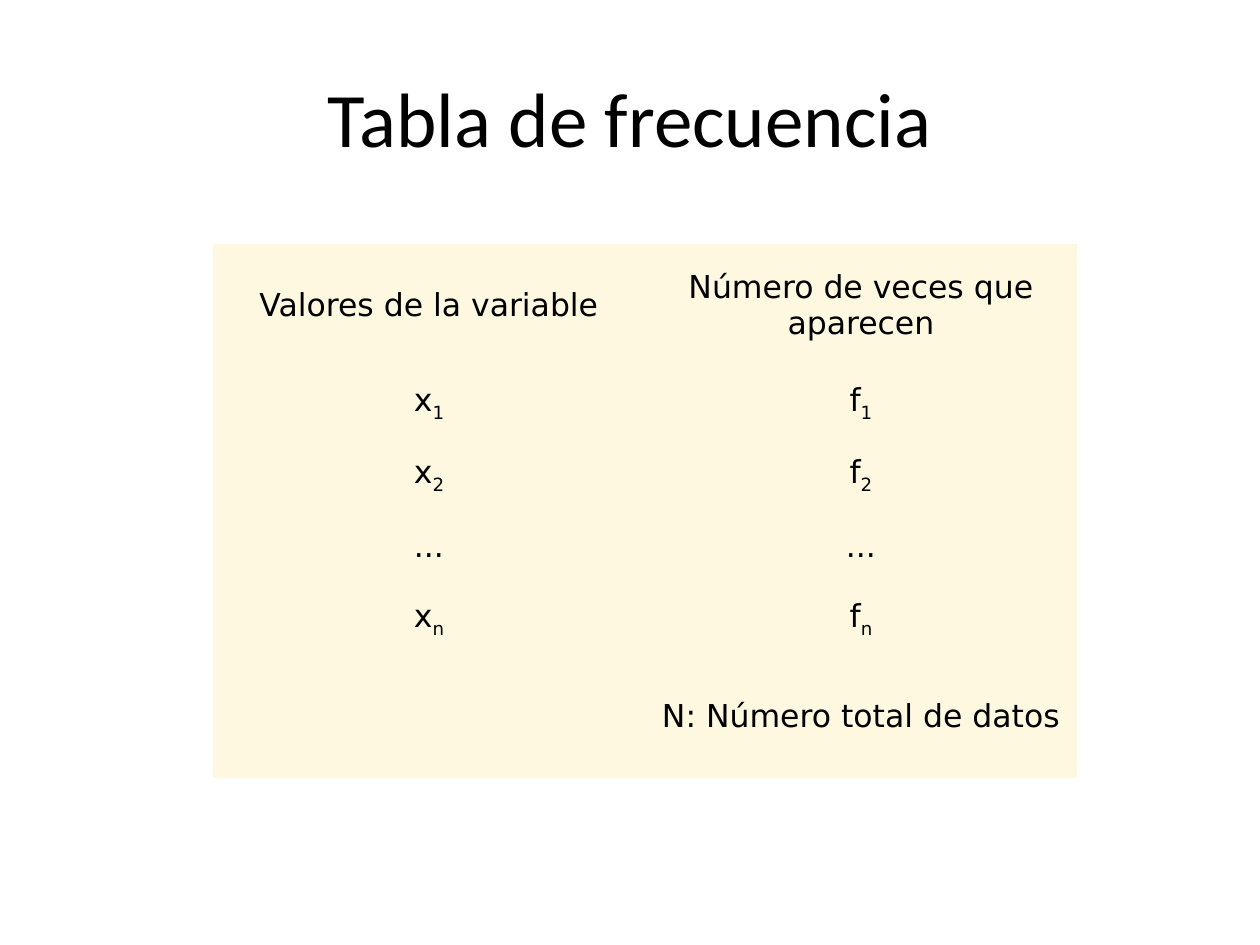
from pptx import Presentation
from pptx.dml.color import RGBColor
from pptx.enum.text import MSO_ANCHOR as ANCHOR, PP_ALIGN as ALIGN
from pptx.util import Pt

PX = 914400 // 126
COLORS = {"text": "000000", "cell": "FFF8E1"}
NO_STYLE = "{2D5ABB26-0587-4C30-8999-92F81FD0307C}"

# A cell is a list of runs; a run starting with "_" is a subscript.
ROWS = [
    (["Valores de la variable"], ["Número de veces que aparecen"]),
    (["x", "_1"], ["f", "_1"]),
    (["x", "_2"], ["f", "_2"]),
    (["..."], ["..."]),
    (["x", "_n"], ["f", "_n"]),
    ([], ["N: Número total de datos"]),
]
COL_WIDTH = 432
ROW_HEIGHTS = [123, 72, 72, 72, 72, 123]


class SlideBuilder:
    def __init__(self, slide):
        self.slide = slide
        self.title_font, self.title_size = "Calibri", 44
        self.cell_font, self.cell_size = "DejaVu Sans", 18
        self.cell_margin = 8

    def style(self, p, font, size):
        p.alignment = ALIGN.CENTER
        p.font.name, p.font.size = font, Pt(size)
        p.font.color.rgb = RGBColor.from_string(COLORS["text"])

    def title(self, text, x, y, w, h):
        sp = self.slide.shapes.title
        sp.left, sp.top, sp.width, sp.height = (v * PX for v in (x, y, w, h))
        tf = sp.text_frame
        tf.text = text
        tf.vertical_anchor = ANCHOR.MIDDLE
        self.style(tf.paragraphs[0], self.title_font, self.title_size)

    def cell(self, cell, runs):
        cell.fill.solid()
        cell.fill.fore_color.rgb = RGBColor.from_string(COLORS["cell"])
        cell.vertical_anchor = ANCHOR.MIDDLE
        margin = self.cell_margin * PX
        cell.margin_left = cell.margin_right = margin
        cell.margin_top = cell.margin_bottom = margin
        p = cell.text_frame.paragraphs[0]
        self.style(p, self.cell_font, self.cell_size)
        for text in runs:
            r = p.add_run()
            r.text = text.lstrip("_")
            if text.startswith("_"):
                r._r.get_or_add_rPr().set("baseline", "-25000")

    def table(self, rows, x, y, col_width, row_heights):
        cols = len(rows[0])
        frame = self.slide.shapes.add_table(
            len(rows), cols, x * PX, y * PX,
            cols * col_width * PX, sum(row_heights) * PX)
        table = frame.table
        table.first_row = table.horz_banding = False
        table._tbl.tblPr[0].text = NO_STYLE
        for column in table.columns:
            column.width = col_width * PX
        for row, height, contents in zip(table.rows, row_heights, rows):
            row.height = height * PX
            for cell, runs in zip(row.cells, contents):
                self.cell(cell, runs)


def main():
    prs = Presentation()
    prs.slide_width, prs.slide_height = 1260 * PX, 945 * PX
    title_only = prs.slide_layouts[5]
    s = SlideBuilder(prs.slides.add_slide(title_only))
    s.title("Tabla de frecuencia", 63, 38, 1134, 158)
    s.table(ROWS, 213, 244, COL_WIDTH, ROW_HEIGHTS)
    prs.save("out.pptx")


if __name__ == "__main__":
    main()
